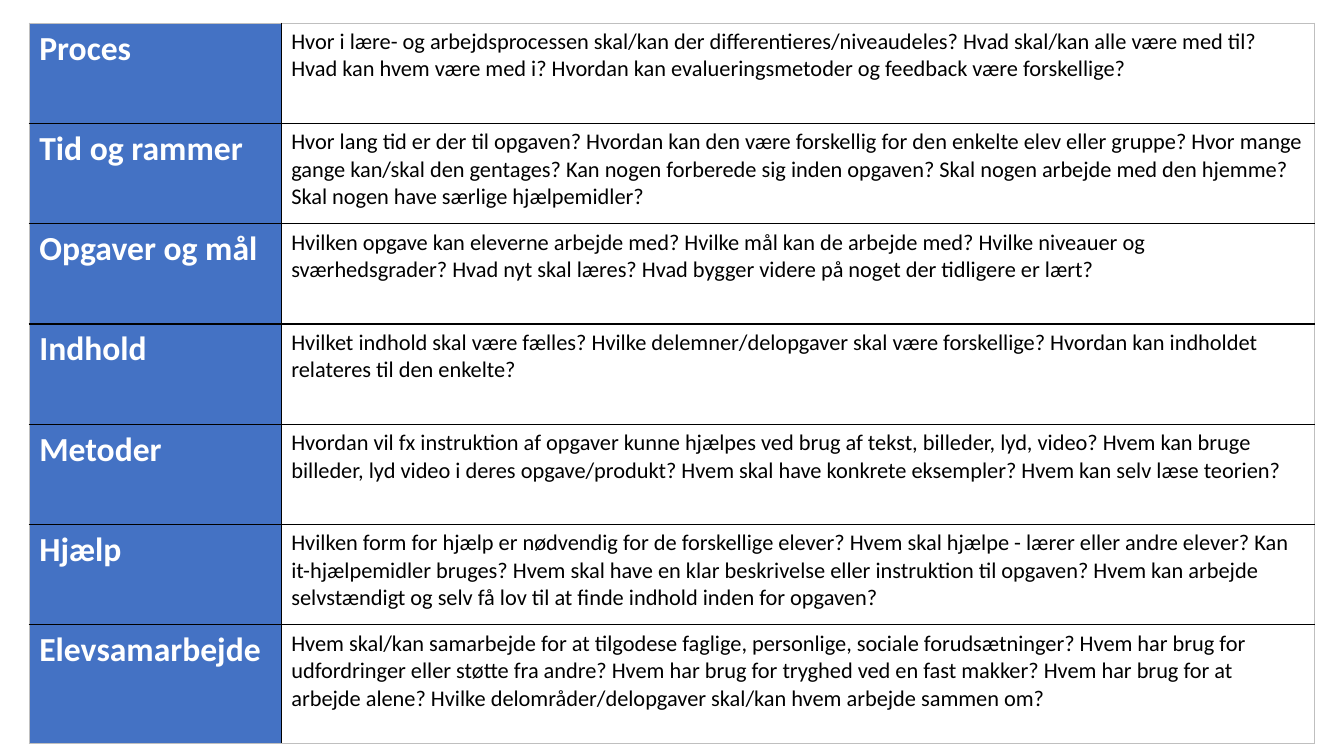
"""Build a slide with a table of questions for differentiated teaching."""
from pptx import Presentation
from pptx.dml.color import RGBColor
from pptx.oxml.ns import qn
from pptx.util import Inches, Pt
from lxml.etree import SubElement

BLUE, WHITE, BLACK, GREY = "4472C4", "FFFFFF", "000000", "BFBFBF"
COLS = [2.5, 10.25]
ROWS = [0.995] * 6 + [1.18]
TOPICS = [
    ("Proces", "Hvor i lære- og arbejdsprocessen skal/kan der differentieres/niveaudeles? "
     "Hvad skal/kan alle være med til? Hvad kan hvem være med i? "
     "Hvordan kan evalueringsmetoder og feedback være forskellige?"),
    ("Tid og rammer", "Hvor lang tid er der til opgaven? "
     "Hvordan kan den være forskellig for den enkelte elev eller gruppe? "
     "Hvor mange gange kan/skal den gentages? Kan nogen forberede sig inden opgaven? "
     "Skal nogen arbejde med den hjemme? Skal nogen have særlige hjælpemidler?"),
    ("Opgaver og mål", "Hvilken opgave kan eleverne arbejde med? "
     "Hvilke mål kan de arbejde med? Hvilke niveauer og sværhedsgrader? "
     "Hvad nyt skal læres? Hvad bygger videre på noget der tidligere er lært?"),
    ("Indhold", "Hvilket indhold skal være fælles? "
     "Hvilke delemner/delopgaver skal være forskellige? "
     "Hvordan kan indholdet relateres til den enkelte?"),
    ("Metoder", "Hvordan vil fx instruktion af opgaver kunne hjælpes ved brug af tekst, "
     "billeder, lyd, video? Hvem kan bruge billeder, lyd video i deres opgave/produkt? "
     "Hvem skal have konkrete eksempler? Hvem kan selv læse teorien?"),
    ("Hjælp", "Hvilken form for hjælp er nødvendig for de forskellige elever? "
     "Hvem skal hjælpe - lærer eller andre elever? Kan it-hjælpemidler bruges? "
     "Hvem skal have en klar beskrivelse eller instruktion til opgaven? "
     "Hvem kan arbejde selvstændigt og selv få lov til at finde indhold inden for opgaven?"),
    ("Elevsamarbejde", "Hvem skal/kan samarbejde for at tilgodese faglige, personlige, "
     "sociale forudsætninger? Hvem har brug for udfordringer eller støtte fra andre? "
     "Hvem har brug for tryghed ved en fast makker? Hvem har brug for at arbejde alene? "
     "Hvilke delområder/delopgaver skal/kan hvem arbejde sammen om?"),
]


def paint(fill, color):
    fill.solid()
    fill.fore_color.rgb = RGBColor.from_string(color)


def add_border(cell, side, color):
    ln = SubElement(cell._tc.get_or_add_tcPr(), qn(f"a:ln{side}"), w=str(Pt(1)))
    SubElement(SubElement(ln, qn("a:solidFill")), qn("a:srgbClr"), val=color)


prs = Presentation()
prs.slide_width, prs.slide_height = Inches(13.333), Inches(7.5)
s = prs.slides.add_slide(prs.slide_layouts[6])
tbl = s.shapes.add_table(len(ROWS), len(COLS), Inches(0.29), Inches(0.23),
                         Inches(sum(COLS)), Inches(sum(ROWS))).table
tbl.first_row = tbl.horz_banding = False
for col, width in zip(tbl.columns, COLS):
    col.width = Inches(width)
for row, height in zip(tbl.rows, ROWS):
    row.height = Inches(height)

for i, topic in enumerate(TOPICS):
    for j, text in enumerate(topic):
        cell = tbl.cell(i, j)
        is_edge = {"L": j == 0, "R": j == len(COLS) - 1,
                   "T": i == 0, "B": i == len(ROWS) - 1}
        for side, edge in is_edge.items():
            add_border(cell, side, GREY if edge else BLACK)
        paint(cell.fill, WHITE if j else BLUE)
        r = cell.text_frame.paragraphs[0].add_run()
        r.text = text
        r.font.name = "Calibri"
        r.font.size = Pt(16 if j else 24)
        r.font.bold = j == 0
        paint(r.font.fill, BLACK if j else WHITE)

prs.save("out.pptx")
